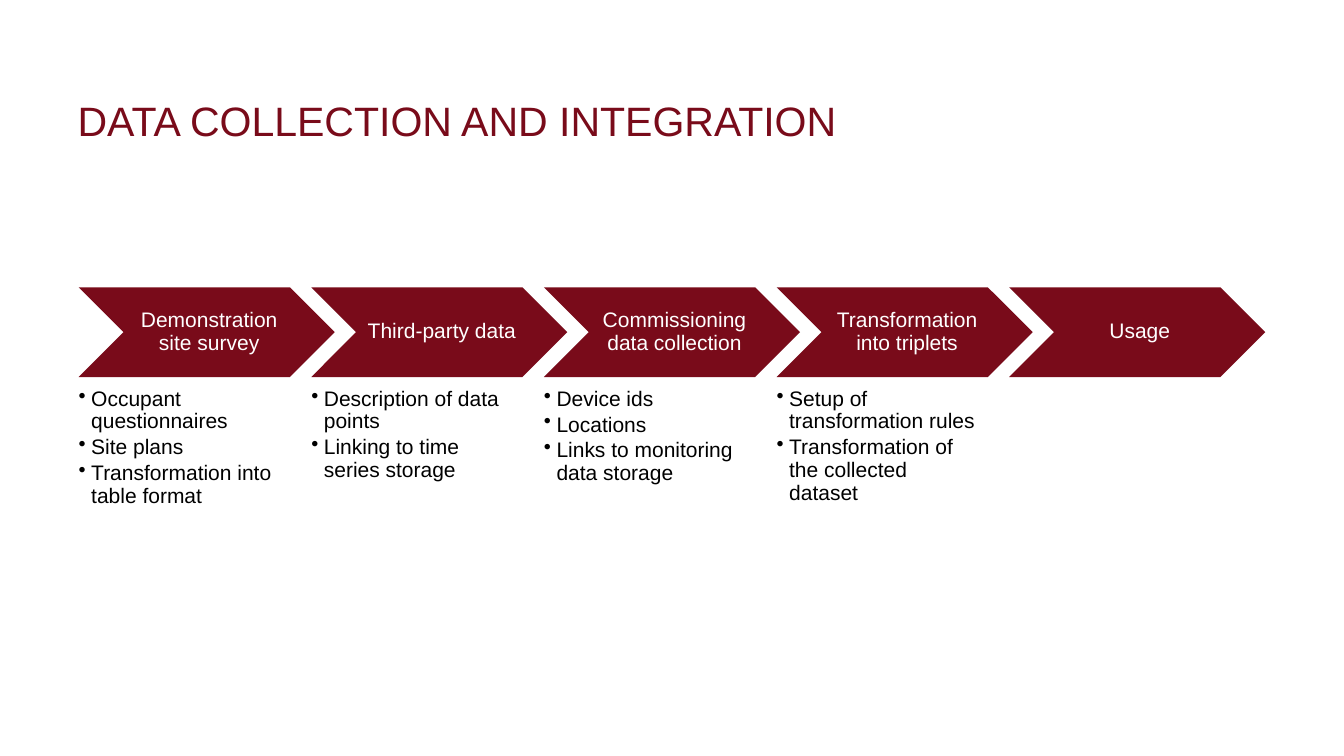
from pptx import Presentation
from pptx.dml.color import RGBColor
from pptx.enum.shapes import MSO_SHAPE as Shape
from pptx.enum.text import MSO_ANCHOR as Anchor, PP_ALIGN as Align
from pptx.oxml.ns import qn
from pptx.util import Inches, Pt
from lxml.etree import SubElement

WINE = RGBColor(0x79, 0x0B, 0x1A)
WHITE = RGBColor(0xFF, 0xFF, 0xFF)
BLACK = RGBColor(0, 0, 0)

LEFT, PITCH = 0.78, 2.3075
STEPS = [
    ("Demonstration site survey",
     ["Occupant questionnaires", "Site plans", "Transformation into table format"]),
    ("Third-party data",
     ["Description of data points", "Linking to time series storage"]),
    ("Commissioning data collection",
     ["Device ids", "Locations", "Links to monitoring data storage"]),
    ("Transformation into triplets",
     ["Setup of transformation rules", "Transformation of the collected dataset"]),
    ("Usage", []),
]


class Deck:
    font = "Arial"
    size = 15

    def __init__(self):
        self.file = Presentation()
        self.file.slide_width = Inches(13.33)
        self.file.slide_height = Inches(7.5)
        self.slide = self.file.slides.add_slide(self.file.slide_layouts[5])

    def frame(self, shape, anchor, pads=(0, 0, 0, 0)):
        """Set wrapping, anchor and left, top, right, bottom insets."""
        text = shape.text_frame
        text.word_wrap = True
        text.vertical_anchor = anchor
        (text.margin_left, text.margin_top,
         text.margin_right, text.margin_bottom) = map(Inches, pads)
        return text

    def run(self, para, words, color, size=None):
        run = para.add_run()
        run.text = words
        run.font.name = self.font
        run.font.size = Pt(size or self.size)
        run.font.color.rgb = color

    def title(self, words):
        shape = self.slide.shapes.title
        shape.left, shape.top = Inches(0.77), Inches(0.39)
        shape.width, shape.height = Inches(9.15), Inches(1.05)
        para = self.frame(shape, Anchor.BOTTOM).paragraphs[0]
        para.alignment = Align.LEFT
        self.run(para, words, WINE, 29.3)

    def step(self, left, words):
        shape = self.slide.shapes.add_shape(
            Shape.CHEVRON, Inches(left), Inches(2.85), Inches(2.54), Inches(0.89))
        shape.shadow.inherit = False
        shape.fill.solid()
        shape.fill.fore_color.rgb = WINE
        shape.line.fill.background()
        para = self.frame(shape, Anchor.MIDDLE, (0.07, 0.02, 0.02, 0.02)).paragraphs[0]
        para.alignment = Align.CENTER
        para.line_spacing = 0.9
        self.run(para, words, WHITE)

    def bullets(self, left, items):
        box = self.slide.shapes.add_textbox(
            Inches(left), Inches(3.85), Inches(2.03), Inches(1.63))
        text = self.frame(box, Anchor.TOP)
        for i, words in enumerate(items):
            para = text.add_paragraph() if i else text.paragraphs[0]
            para.level = 1
            para.line_spacing = 0.9
            para.space_after = Pt(2.25)
            props = para._p.get_or_add_pPr()
            props.set("marL", str(Inches(0.125)))
            props.set("indent", str(-Inches(0.125)))
            SubElement(props, qn("a:buChar"), char="•")
            self.run(para, words, BLACK)


def main():
    deck = Deck()
    deck.title("DATA COLLECTION AND INTEGRATION")
    for i, (name, items) in enumerate(STEPS):
        left = LEFT + i * PITCH
        deck.step(left, name)
        if items:
            deck.bullets(left, items)
    deck.file.save("out.pptx")


if __name__ == "__main__":
    main()
